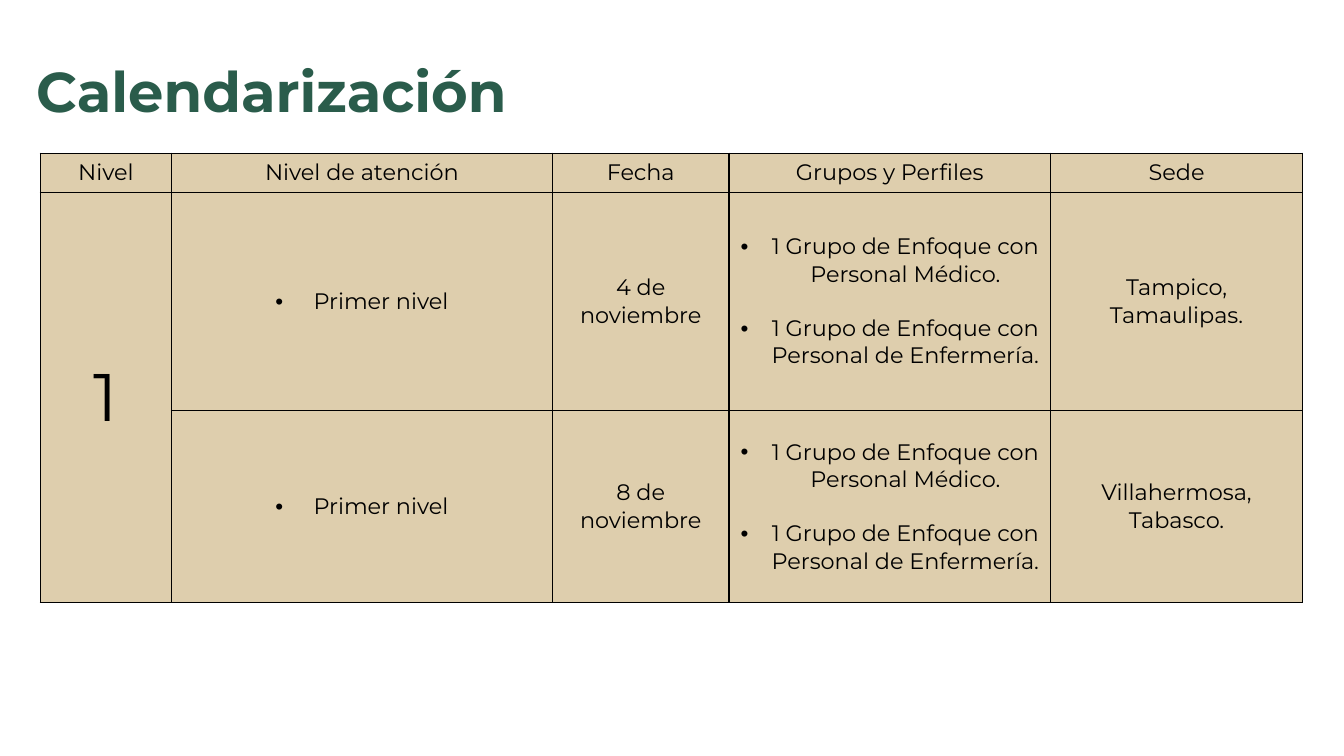
from dataclasses import dataclass

from lxml import etree
from pptx import Presentation
from pptx.dml.color import RGBColor
from pptx.enum.text import MSO_ANCHOR, PP_ALIGN
from pptx.oxml.ns import qn
from pptx.slide import Slide
from pptx.table import _Cell
from pptx.text.text import _Paragraph
from pptx.util import Inches, Pt

CENTER = PP_ALIGN.CENTER
LEFT = PP_ALIGN.LEFT
MIDDLE = MSO_ANCHOR.MIDDLE


@dataclass(frozen=True)
class Theme:
    font: str = "Montserrat"
    green: str = "2A5C4B"
    sand: str = "DECEAD"
    black: str = "000000"
    title_size: float = 40
    body_size: float = 16
    level_size: float = 48
    border_width: float = 1
    bullet_gap: float = 19.5


@dataclass(frozen=True)
class Entry:
    """Cell content; a positive indent (inches) gives each line a bullet."""
    lines: tuple[str, ...]
    size: float
    indent: float = 0


@dataclass(frozen=True)
class Session:
    date: str
    venue: str


THEME = Theme()
COLUMN_WIDTHS = (1.3, 3.78, 1.75, 3.19, 2.5)
ROW_HEIGHTS = (0.39, 2.16, 1.91)
HEADINGS = ("Nivel", "Nivel de atención", "Fecha", "Grupos y Perfiles", "Sede")
GROUPS = (
    "1 Grupo de Enfoque con Personal Médico.",
    "1 Grupo de Enfoque con Personal de Enfermería.",
)
SESSIONS = (
    Session("4 de noviembre", "Tampico, Tamaulipas."),
    Session("8 de noviembre", "Villahermosa, Tabasco."),
)


def write(para: _Paragraph, text: str, *, size: float, color: str = THEME.black,
          bold: bool = False, align: PP_ALIGN = CENTER) -> None:
    para.alignment = align
    span = para.add_run()
    span.text = text
    span.font.name = THEME.font
    span.font.size = Pt(size)
    span.font.bold = bold
    span.font.color.rgb = RGBColor.from_string(color)


def add_bullet(para: _Paragraph, indent: float) -> None:
    properties = para._p.get_or_add_pPr()
    properties.set("marL", str(Inches(indent)))
    properties.set("indent", str(-Inches(indent)))
    etree.SubElement(properties, qn("a:buFont"), typeface="Arial")
    etree.SubElement(properties, qn("a:buChar"), char="•")


def add_borders(cell: _Cell) -> None:
    properties = cell._tc.get_or_add_tcPr()
    for side in ("lnL", "lnR", "lnT", "lnB"):
        line = etree.SubElement(properties, qn(f"a:{side}"), w=str(Pt(THEME.border_width)))
        fill = etree.SubElement(line, qn("a:solidFill"))
        etree.SubElement(fill, qn("a:srgbClr"), val=THEME.black)


def style_cell(cell: _Cell) -> None:
    add_borders(cell)
    cell.fill.solid()
    cell.fill.fore_color.rgb = RGBColor.from_string(THEME.sand)
    cell.vertical_anchor = MIDDLE
    cell.margin_left = cell.margin_right = Inches(0.08)


def fill_cell(cell: _Cell, entry: Entry) -> None:
    frame = cell.text_frame
    for index, text in enumerate(entry.lines):
        para = frame.add_paragraph() if index else frame.paragraphs[0]
        if entry.indent:
            add_bullet(para, entry.indent)
        if index:
            para.space_before = Pt(THEME.bullet_gap)
        write(para, text, size=entry.size)


def add_title(page: Slide, text: str) -> None:
    box = page.shapes.add_textbox(Inches(0.26), Inches(0.61), Inches(11.5), Inches(0.65))
    frame = box.text_frame
    frame.word_wrap = True
    frame.vertical_anchor = MIDDLE
    para = frame.paragraphs[0]
    para.line_spacing = 0.9
    write(para, text, size=THEME.title_size, color=THEME.green, bold=True, align=LEFT)


def session_entries(session: Session) -> tuple[Entry, ...]:
    return (
        Entry(("Primer nivel",), THEME.body_size, indent=0.38),
        Entry((session.date,), THEME.body_size),
        Entry(GROUPS, THEME.body_size, indent=0.31),
        Entry((session.venue,), THEME.body_size),
    )


def add_calendar(page: Slide) -> None:
    table = page.shapes.add_table(
        len(ROW_HEIGHTS), len(COLUMN_WIDTHS), Inches(0.4), Inches(1.52),
        Inches(sum(COLUMN_WIDTHS)), Inches(sum(ROW_HEIGHTS)),
    ).table
    table.first_row = table.horz_banding = False
    for column, width in zip(table.columns, COLUMN_WIDTHS):
        column.width = Inches(width)
    for row, height in zip(table.rows, ROW_HEIGHTS):
        row.height = Inches(height)
    for cell in table.iter_cells():
        style_cell(cell)

    for column_index, heading in enumerate(HEADINGS):
        fill_cell(table.cell(0, column_index), Entry((heading,), THEME.body_size))
    level = table.cell(1, 0)
    level.merge(table.cell(len(SESSIONS), 0))
    fill_cell(level, Entry(("1",), THEME.level_size))
    for row_index, session in enumerate(SESSIONS, start=1):
        for column_index, entry in enumerate(session_entries(session), start=1):
            fill_cell(table.cell(row_index, column_index), entry)


def main() -> None:
    deck = Presentation()
    deck.slide_width = Inches(13.33)
    deck.slide_height = Inches(7.5)
    page = deck.slides.add_slide(deck.slide_layouts[6])
    add_title(page, "Calendarización")
    add_calendar(page)
    deck.save("out.pptx")


if __name__ == "__main__":
    main()
